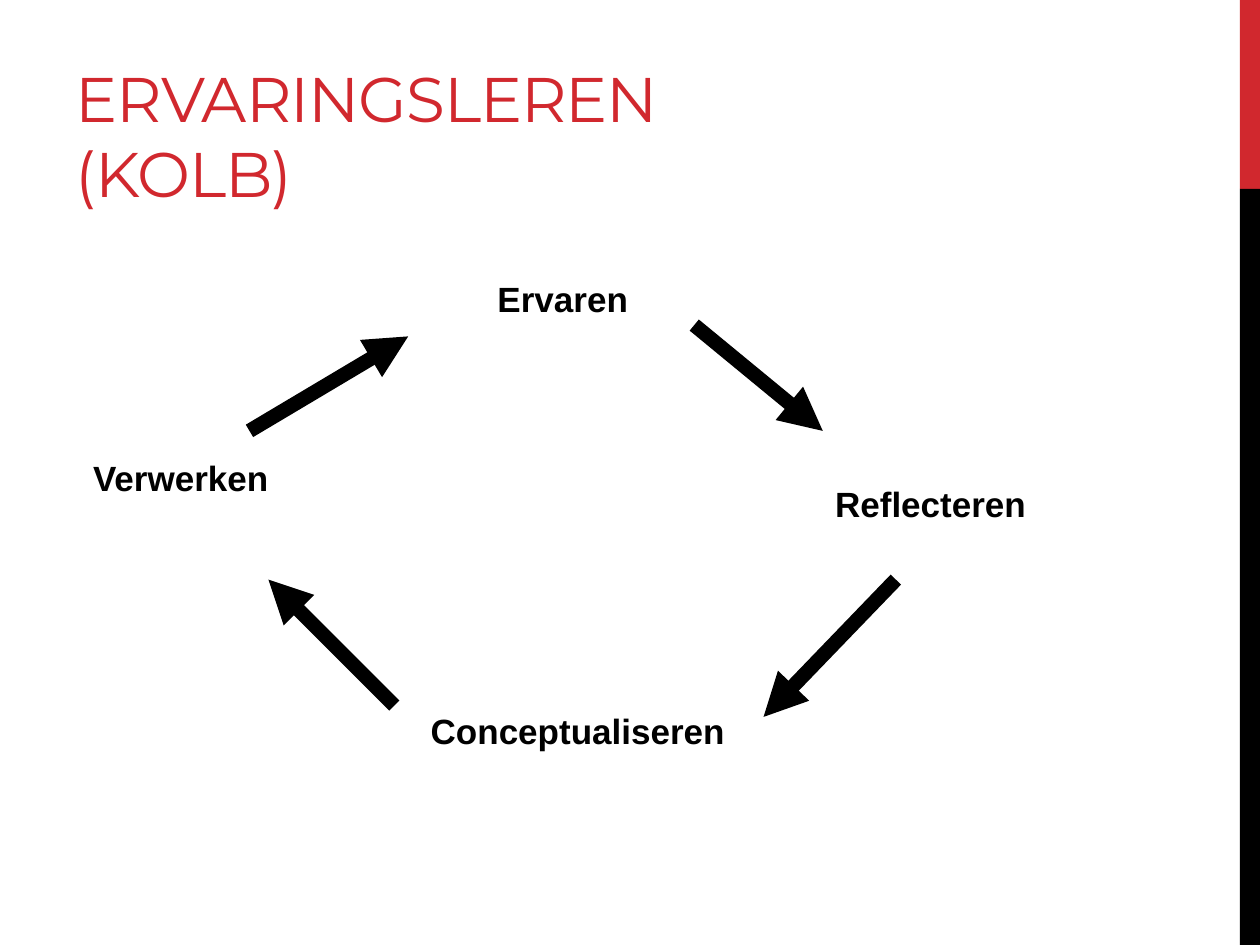
from lxml.etree import SubElement
from pptx import Presentation
from pptx.dml.color import RGBColor
from pptx.enum.shapes import MSO_CONNECTOR, MSO_SHAPE
from pptx.enum.text import MSO_ANCHOR, MSO_AUTO_SIZE, PP_ALIGN
from pptx.oxml.ns import qn
from pptx.util import Inches, Pt

COLORS = {"red": "D1282E", "black": "000000"}


class CycleSlide:
    """Holds the style and the current slide."""

    title_font = "Montserrat"
    label_font = "Arial"

    def __init__(self, presentation):
        self.slide = presentation.slides.add_slide(presentation.slide_layouts[5])
        self.shapes = self.slide.shapes

    def color(self, name):
        return RGBColor.from_string(COLORS[name])

    def set_text(self, shape, text, font_name, size, color, bold=False):
        shape.text_frame.word_wrap = True
        paragraph = shape.text_frame.paragraphs[0]
        paragraph.text = text
        paragraph.alignment = PP_ALIGN.LEFT
        font = paragraph.font
        font.name, font.size, font.bold = font_name, Pt(size), bold
        font.color.rgb = self.color(color)
        return paragraph

    def title(self, text, left, top, width, height):
        shape = self.shapes.title
        shape.left, shape.top = Inches(left), Inches(top)
        shape.width, shape.height = Inches(width), Inches(height)
        frame = shape.text_frame
        frame.auto_size = MSO_AUTO_SIZE.NONE
        frame.vertical_anchor = MSO_ANCHOR.BOTTOM
        frame.margin_bottom = 0
        paragraph = self.set_text(shape, text, self.title_font, 36, "red")
        # Slightly tightened letter spacing, in hundredths of a point
        paragraph.runs[0]._r.get_or_add_rPr().set("spc", "-60")

    def bar(self, color, left, top, width, height):
        shape = self.shapes.add_shape(
            MSO_SHAPE.RECTANGLE, Inches(left), Inches(top), Inches(width), Inches(height)
        )
        shape.shadow.inherit = False
        shape.fill.solid()
        shape.fill.fore_color.rgb = self.color(color)
        shape.line.fill.background()

    def label(self, text, left, top, width, height=0.43):
        shape = self.shapes.add_textbox(
            Inches(left), Inches(top), Inches(width), Inches(height)
        )
        self.set_text(shape, text, self.label_font, 20, "black", bold=True)
        shape.text_frame.auto_size = MSO_AUTO_SIZE.SHAPE_TO_FIT_TEXT

    def arrow(self, start, end):
        connector = self.shapes.add_connector(
            MSO_CONNECTOR.STRAIGHT, *(Inches(value) for value in start + end)
        )
        connector.line.width = Pt(8.25)
        connector.line.color.rgb = self.color("black")
        properties = connector._element.spPr
        SubElement(properties.find(qn("a:ln")), qn("a:tailEnd"), type="triangle")
        SubElement(properties, qn("a:effectLst"))


def main():
    presentation = Presentation()
    presentation.slide_width = Inches(10)
    presentation.slide_height = Inches(7.5)
    cycle = CycleSlide(presentation)

    # Side bars
    cycle.bar("red", 9.84, 0, 0.16, 1.5)
    cycle.bar("black", 9.84, 1.5, 0.16, 6)

    # Title
    cycle.title("ERVARINGSLEREN (KOLB)", 0.5, 0.17, 6.33, 1.5)

    # Stages of the learning cycle
    for text, left, top, width in (
        ("Ervaren", 3.85, 2.15, 3.77),
        ("Conceptualiseren", 3.32, 5.58, 3.77),
        ("Reflecteren", 6.53, 3.78, 1.93),
        ("Verwerken", 0.64, 3.57, 3.77),
    ):
        cycle.label(text, left, top, width)

    # Arrows between the stages, clockwise
    for start, end in (
        ((3.13, 5.6), (2.13, 4.6)),
        ((1.98, 3.42), (3.24, 2.67)),
        ((5.51, 2.58), (6.53, 3.42)),
        ((7.11, 4.6), (6.06, 5.69)),
    ):
        cycle.arrow(start, end)

    presentation.save("out.pptx")


if __name__ == "__main__":
    main()
